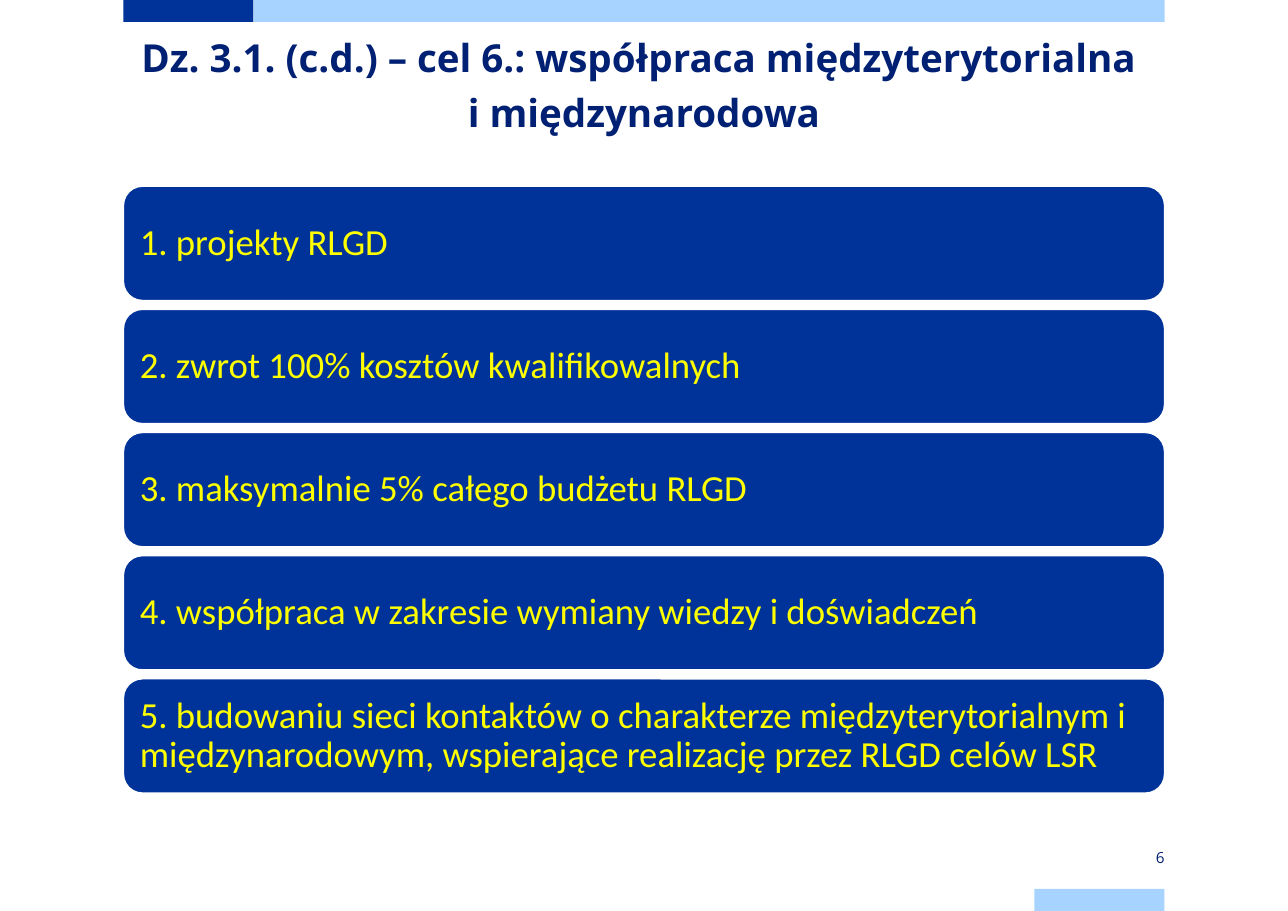
from dataclasses import dataclass

from pptx import Presentation
from pptx import util as u
from pptx.dml.color import RGBColor
from pptx.enum import shapes, text


@dataclass(frozen=True)
class Theme:
    navy: str = "003399"
    sky: str = "A6D3FF"
    ink: str = "002073"
    yellow: str = "FFFF00"
    white: str = "FFFFFF"
    heading_font: str = "Open Sans"
    body_font: str = "Calibri"
    title_size: float = 25.2
    card_size: float = 24
    number_size: float = 10


WIDTH, HEIGHT = 11.69, 8.27
LEFT, RIGHT, COLUMNS = 1.12, 10.57, 8
COLUMN = (RIGHT - LEFT) / COLUMNS
CARDS_TOP, CARDS_HEIGHT, GAP = 1.69, 5.51, 0.08
BAR_HEIGHT = 0.2

TITLE = "Dz. 3.1. (c.d.) – cel 6.: współpraca międzyterytorialna \vi międzynarodowa"
CARDS = [
    "1. projekty RLGD",
    "2. zwrot 100% kosztów kwalifikowalnych",
    "3. maksymalnie 5% całego budżetu RLGD",
    "4. współpraca w zakresie wymiany wiedzy i doświadczeń",
    "5. budowaniu sieci kontaktów o charakterze międzyterytorialnym i "
    "międzynarodowym, wspierające realizację przez RLGD celów LSR",
]


def set_all(obj, values):
    for name, value in values.items():
        setattr(obj, name, value)


class Deck:
    def __init__(self, theme):
        self.theme = theme
        self.prs = Presentation()
        self.prs.slide_width = u.Inches(WIDTH)
        self.prs.slide_height = u.Inches(HEIGHT)
        self.s = self.prs.slides.add_slide(self.prs.slide_layouts[6])

    def box(self, col, span, top, height):
        """Turn grid columns and a vertical extent into a shape's box."""
        lengths = LEFT + col * COLUMN, top, span * COLUMN, height
        return [u.Inches(length) for length in lengths]

    def fill_text(self, sp, words, font, paragraph, inset=0, anchor=text.MSO_ANCHOR.MIDDLE):
        tf = sp.text_frame
        margins = dict.fromkeys(
            ("margin_left", "margin_top", "margin_right", "margin_bottom"), u.Inches(inset))
        set_all(tf, {"word_wrap": True, "vertical_anchor": anchor, **margins})
        p = tf.paragraphs[0]
        p.text = words
        set_all(p, paragraph)
        name, size, color, bold = font
        for r in p.runs:
            set_all(r.font, {"name": name, "size": u.Pt(size), "bold": bold})
            r.font.color.rgb = RGBColor.from_string(color)

    def block(self, kind, box, fill):
        sp = self.s.shapes.add_shape(kind, *box)
        sp.shadow.inherit = False
        sp.fill.solid()
        sp.fill.fore_color.rgb = RGBColor.from_string(fill)
        sp.line.fill.background()
        return sp

    def bar(self, col, span, top, fill):
        self.block(shapes.MSO_SHAPE.RECTANGLE, self.box(col, span, top, BAR_HEIGHT), fill)

    def title(self, words):
        t = self.theme
        sp = self.s.shapes.add_textbox(*self.box(0, COLUMNS, 0.23, 1.07))
        self.fill_text(sp, words, (t.heading_font, t.title_size, t.ink, True),
                       {"alignment": text.PP_ALIGN.CENTER, "line_spacing": u.Pt(36)},
                       anchor=text.MSO_ANCHOR.TOP)

    def cards(self, items):
        t = self.theme
        pitch = (CARDS_HEIGHT + GAP) / len(items)
        for row, words in enumerate(items):
            box = self.box(0, COLUMNS, CARDS_TOP + row * pitch, pitch - GAP)
            sp = self.block(shapes.MSO_SHAPE.ROUNDED_RECTANGLE, box, t.navy)
            sp.line.color.rgb = RGBColor.from_string(t.white)
            sp.line.width = u.Pt(1)
            self.fill_text(sp, words, (t.body_font, t.card_size, t.yellow, False),
                           {"alignment": text.PP_ALIGN.LEFT, "line_spacing": 0.9}, inset=0.1)

    def page_number(self, number):
        t = self.theme
        sp = self.s.shapes.add_textbox(*self.box(COLUMNS - 1, 1, 7.68, 0.2))
        self.fill_text(sp, number, (t.heading_font, t.number_size, t.ink, False),
                       {"alignment": text.PP_ALIGN.RIGHT})


def main():
    theme = Theme()
    deck = Deck(theme)
    deck.bar(0, 1, 0, theme.navy)
    deck.bar(1, COLUMNS - 1, 0, theme.sky)
    deck.bar(COLUMNS - 1, 1, HEIGHT - BAR_HEIGHT, theme.sky)
    deck.title(TITLE)
    deck.cards(CARDS)
    deck.page_number("6")
    deck.prs.save("out.pptx")


if __name__ == "__main__":
    main()
